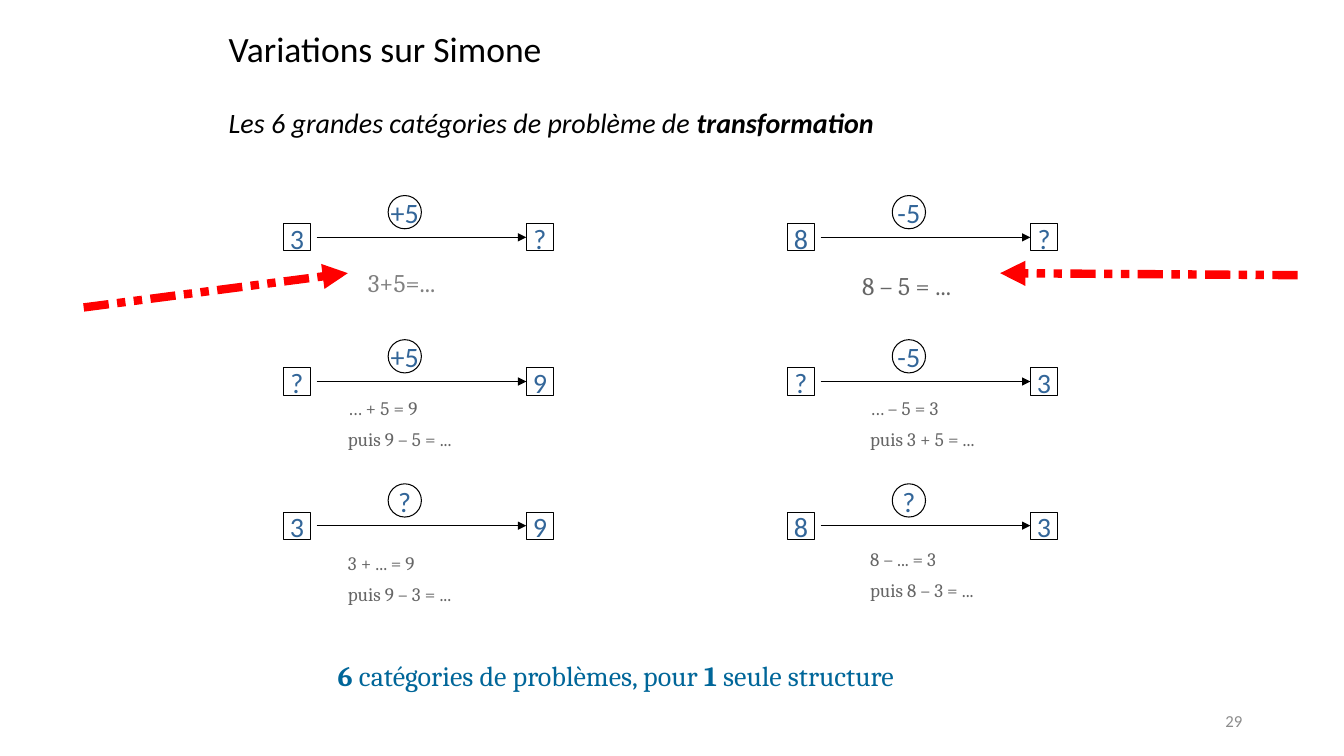
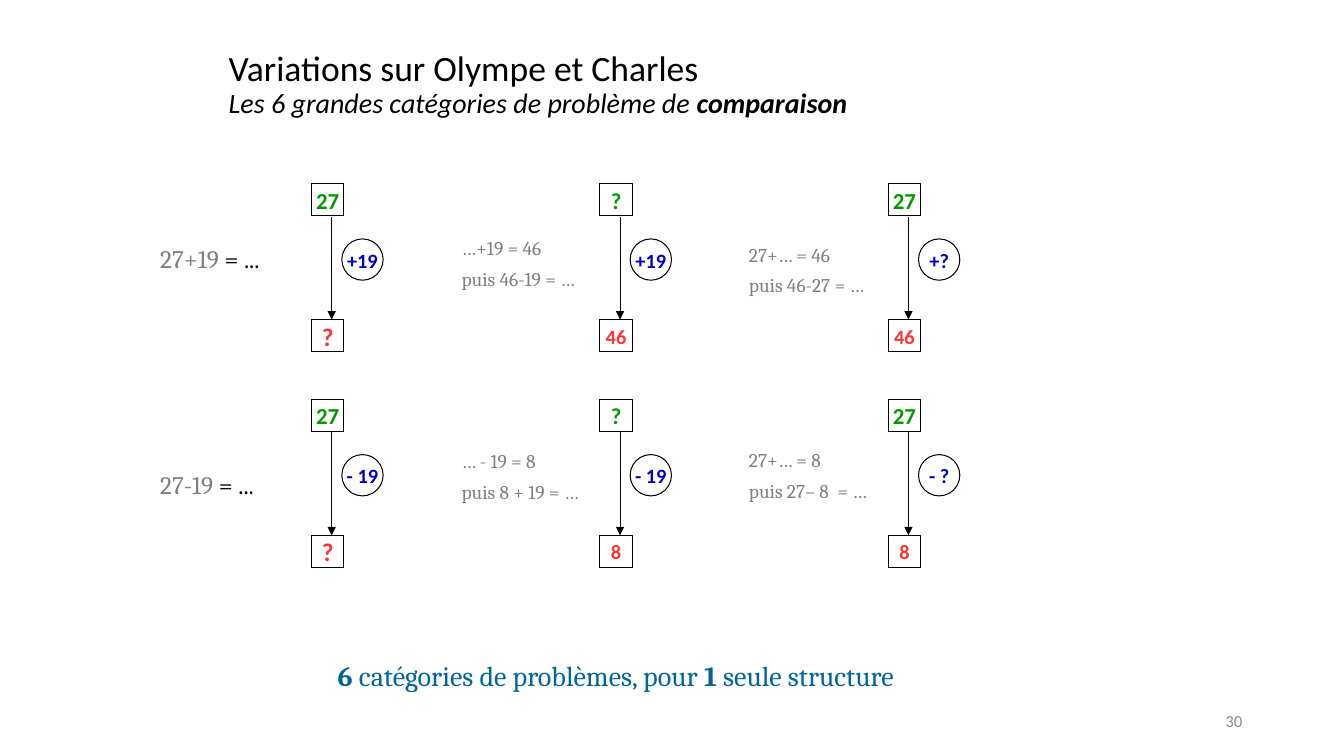
"""Build two slides on the categories of transformation and comparison problems."""
from dataclasses import dataclass, replace
from typing import NamedTuple

from lxml.etree import SubElement
from pptx import Presentation
from pptx.dml.color import RGBColor
from pptx.enum.dml import MSO_LINE
from pptx.enum.shapes import MSO_CONNECTOR, MSO_SHAPE
from pptx.enum.text import MSO_ANCHOR, PP_ALIGN
from pptx.oxml.ns import qn
from pptx.util import Inches, Pt

BLACK = RGBColor(0x00, 0x00, 0x00)
GREY = RGBColor(0x80, 0x80, 0x80)
DARK = RGBColor(0x66, 0x66, 0x66)
PALE = RGBColor(0x8C, 0x8C, 0x8C)
STEEL = RGBColor(0x33, 0x66, 0x99)
TEAL = RGBColor(0x00, 0x66, 0x99)
GREEN = RGBColor(0x00, 0x99, 0x00)
ROSE = RGBColor(0xFF, 0x33, 0x33)
BLUE = RGBColor(0x00, 0x00, 0xCC)
RED = RGBColor(0xFF, 0x00, 0x00)


@dataclass(frozen=True)
class Style:
    """Look of a text block."""
    size: float
    color: RGBColor
    font: str = "Calibri"
    inset: tuple = (0.1, 0.01, 0.1, 0.05)
    lead: float = 1.0
    before: float = 0
    after: float = 0
    bold: bool = False
    italic: bool = False
    align: PP_ALIGN = PP_ALIGN.LEFT
    anchor: MSO_ANCHOR = MSO_ANCHOR.TOP
    wrap: bool = True


class Run(NamedTuple):
    """Piece of text that departs from its paragraph."""
    text: str
    bold: bool | None = None
    color: RGBColor | None = None


class Box(NamedTuple):
    """Place of an element in inches."""
    left: float
    top: float
    width: float
    height: float


class Note(NamedTuple):
    """Text block beside a diagram."""
    box: Box
    style: Style
    lines: list


class Chain(NamedTuple):
    """Values of one diagram: start, change and end."""
    start: str
    change: str
    end: str


SHAPE_INSET = (0.09, 0.05, 0.09, 0.04)
TITLE = Style(25.4, BLACK, lead=0.9, anchor=MSO_ANCHOR.MIDDLE)
CLAIM = Style(20, TEAL, "Cambria", SHAPE_INSET)
PAGE = Style(12, PALE, inset=(0.1, 0.05, 0.1, 0.05), align=PP_ALIGN.RIGHT, anchor=MSO_ANCHOR.MIDDLE)
VALUE = Style(20, STEEL, inset=SHAPE_INSET, align=PP_ALIGN.CENTER, anchor=MSO_ANCHOR.MIDDLE, wrap=False)
TOP = replace(VALUE, size=16.3, color=GREEN, bold=True)
LOW = replace(TOP, size=14.5, color=ROSE)
ASK = replace(LOW, size=18.1)
GAP = replace(LOW, color=BLUE)
SUM = Style(18.1, GREY, "Cambria", lead=0.9)
DIFF = Style(18.1, DARK, "Cambria", (0, 0.01, 0, 0))
STEPS = Style(13.6, DARK, "Cambria", (0, 0, 0, 0), after=5.9)
EASY = Style(18, GREY, "Cambria", (0.1, 0, 0.1, 0.05), lead=0.9)
HARD = replace(EASY, size=13.9, lead=0.7, before=10)


def add_line(frame, runs: list, style: Style, first: bool) -> None:
    """Write one paragraph into a text frame."""
    para = frame.paragraphs[0] if first else frame.add_paragraph()
    para.alignment = style.align
    para.line_spacing = style.lead
    para.space_before = Pt(0 if first else style.before)
    para.space_after = Pt(style.after)
    font = para.font
    font.name, font.size = style.font, Pt(style.size)
    font.bold, font.italic = style.bold, style.italic
    font.color.rgb = style.color
    for part in runs:
        run = para.add_run()
        run.text = part.text
        if part.bold is not None:
            run.font.bold = part.bold
        if part.color is not None:
            run.font.color.rgb = part.color


def set_frame(frame, style: Style) -> None:
    """Apply insets, anchor and wrapping to a text frame."""
    frame.margin_left, frame.margin_top, frame.margin_right, frame.margin_bottom = map(Inches, style.inset)
    frame.vertical_anchor = style.anchor
    frame.word_wrap = style.wrap


def add_text(slide, box: Box, style: Style, lines: list):
    """Add a text box and return its frame."""
    frame = slide.shapes.add_textbox(*map(Inches, box)).text_frame
    set_frame(frame, style)
    for i, runs in enumerate(lines):
        add_line(frame, [Run(runs)] if isinstance(runs, str) else runs, style, i == 0)
    return frame


def add_node(slide, kind: MSO_SHAPE, box: Box, text: str, style: Style):
    """Add an outlined shape that holds one value."""
    node = slide.shapes.add_shape(kind, *map(Inches, box))
    node.shadow.inherit = False
    node.fill.background()
    node.line.color.rgb = BLACK
    node.line.width = Pt(0.75)
    set_frame(node.text_frame, style)
    add_line(node.text_frame, [Run(text)], style, True)
    return node


def add_arrow(slide, start: tuple, end: tuple, color: RGBColor = BLACK, width: float = 0.75):
    """Add a straight line with a triangle at its end."""
    arrow = slide.shapes.add_connector(MSO_CONNECTOR.STRAIGHT, *map(Inches, (*start, *end)))
    arrow.line.color.rgb = color
    arrow.line.width = Pt(width)
    if color == RED:
        arrow.line.dash_style = MSO_LINE.DASH_DOT_DOT
        dash = arrow.line._ln.find(qn("a:prstDash"))
        dash.set("val", "sysDashDotDot")
    SubElement(arrow.line._ln, qn("a:tailEnd"), type="triangle")
    SubElement(arrow._element.spPr, qn("a:effectLst"))
    return arrow


def add_flow(slide, left: float, top: float, chain: Chain) -> None:
    """Draw a transformation from left to right."""
    side = 0.27
    mid = top + side / 2
    add_node(slide, MSO_SHAPE.RECTANGLE, Box(left, top, side, side), chain.start, VALUE)
    end = add_node(slide, MSO_SHAPE.RECTANGLE, Box(left + 2.41, top, side, side), chain.end, VALUE)
    add_node(slide, MSO_SHAPE.OVAL, Box(left + 1.04, top - 0.28, 0.33, 0.33), chain.change, VALUE)
    arrow = add_arrow(slide, (left + 0.33, mid), (left + 2.41, mid))
    arrow.end_connect(end, 1)


def add_drop(slide, left: float, top: float, chain: Chain) -> None:
    """Draw a comparison from top to bottom."""
    side = 0.32
    low = ASK if chain.end == "?" else LOW
    add_node(slide, MSO_SHAPE.RECTANGLE, Box(left, top, side, side), chain.start, TOP)
    add_node(slide, MSO_SHAPE.RECTANGLE, Box(left, top + 1.35, side, side), chain.end, low)
    add_node(slide, MSO_SHAPE.OVAL, Box(left + 0.3, top + 0.55, 0.41, 0.41), chain.change, GAP)
    add_arrow(slide, (left + 0.2, top + 0.33), (left + 0.2, top + 1.35))


def add_base(deck, title: str, topic: str, gap: float, page: str):
    """Add a slide with its title, claim and page number."""
    slide = deck.slides.add_slide(deck.slide_layouts[6])
    frame = add_text(slide, Box(2.17, 0.29, 9, 1.15), TITLE, [title])
    sub = replace(TITLE, size=20, italic=True, before=gap)
    add_line(frame, [Run("Les 6 grandes catégories de problème de "), Run(topic, True)], sub, False)
    claim = [Run("6", True), Run(" catégories de problèmes, pour "), Run("1", True), Run(" seule structure")]
    add_text(slide, Box(3.26, 6.48, 6.63, 0.45), CLAIM, [claim])
    add_text(slide, Box(9.42, 6.95, 3, 0.4), PAGE, [page])
    return slide


def add_notes(slide, notes: list) -> None:
    """Add the text blocks beside the diagrams."""
    for note in notes:
        add_text(slide, note.box, note.style, note.lines)


def add_change(deck) -> None:
    """Build the slide on transformation."""
    slide = add_base(deck, "Variations sur Simone", "transformation", 28, "29")
    rows = [
        (Chain("3", "+5", "?"), Chain("8", "-5", "?")),
        (Chain("?", "+5", "9"), Chain("?", "-5", "3")),
        (Chain("3", "?", "9"), Chain("8", "?", "3")),
    ]
    for i, row in enumerate(rows):
        for j, chain in enumerate(row):
            add_flow(slide, 2.81 + 5 * j, 2.22 + 1.43 * i, chain)
    size = (1.29, 0.73)
    add_notes(slide, [
        Note(Box(3.55, 2.67, 0.97, 0.38), SUM, ["3+5=..."]),
        Note(Box(8.55, 2.67, 0.97, 0.38), DIFF, ["8 – 5 = ..."]),
        Note(Box(3.45, 3.93, *size), STEPS, ["… + 5 = 9", "puis 9 – 5 = ..."]),
        Note(Box(8.63, 3.93, *size), STEPS, ["… – 5 = 3", "puis 3 + 5 = ..."]),
        Note(Box(3.45, 5.47, *size), STEPS, ["3 + ... = 9", "puis 9 – 3 = ..."]),
        Note(Box(8.63, 5.43, *size), STEPS, ["8 – ... = 3", "puis 8 – 3 = ..."]),
    ])
    add_arrow(slide, (0.83, 3.05), (3.45, 2.71), RED, 6)
    add_arrow(slide, (12.87, 2.73), (9.92, 2.71), RED, 6)


def add_match(deck) -> None:
    """Build the slide on comparison."""
    slide = add_base(deck, "Variations sur Olympe et Charles", "comparaison", 0, "30")
    rows = [
        (Chain("27", "+19", "?"), Chain("?", "+19", "46"), Chain("27", "+?", "46")),
        (Chain("27", "- 19", "?"), Chain("?", "- 19", "8"), Chain("27", "- ?", "8")),
    ]
    for i, row in enumerate(rows):
        for j, chain in enumerate(row):
            add_drop(slide, 3.09 + 2.86 * j, 1.82 + 2.14 * i, chain)
    rest = Run("= ...", color=BLACK)
    size = (1.47, 0.72)
    add_notes(slide, [
        Note(Box(1.49, 2.45, 1.47, 0.43), EASY, [[Run("27+19 "), rest]]),
        Note(Box(1.49, 4.69, 1.47, 0.43), EASY, [[Run("27-19 "), rest]]),
        Note(Box(4.48, 2.41, *size), HARD, ["…+19 = 46", "puis 46-19 = …"]),
        Note(Box(4.48, 4.52, *size), HARD, ["… - 19 = 8", "puis 8 + 19 = …"]),
        Note(Box(7.33, 2.47, *size), HARD, ["27+… = 46", "puis 46-27 = …"]),
        Note(Box(7.33, 4.51, *size), HARD, ["27+… = 8", "puis 27– 8  = …"]),
    ])


def main() -> None:
    """Build and save the deck."""
    deck = Presentation()
    deck.slide_width, deck.slide_height = Inches(13.33), Inches(7.5)
    add_change(deck)
    add_match(deck)
    deck.save("out.pptx")


if __name__ == "__main__":
    main()
